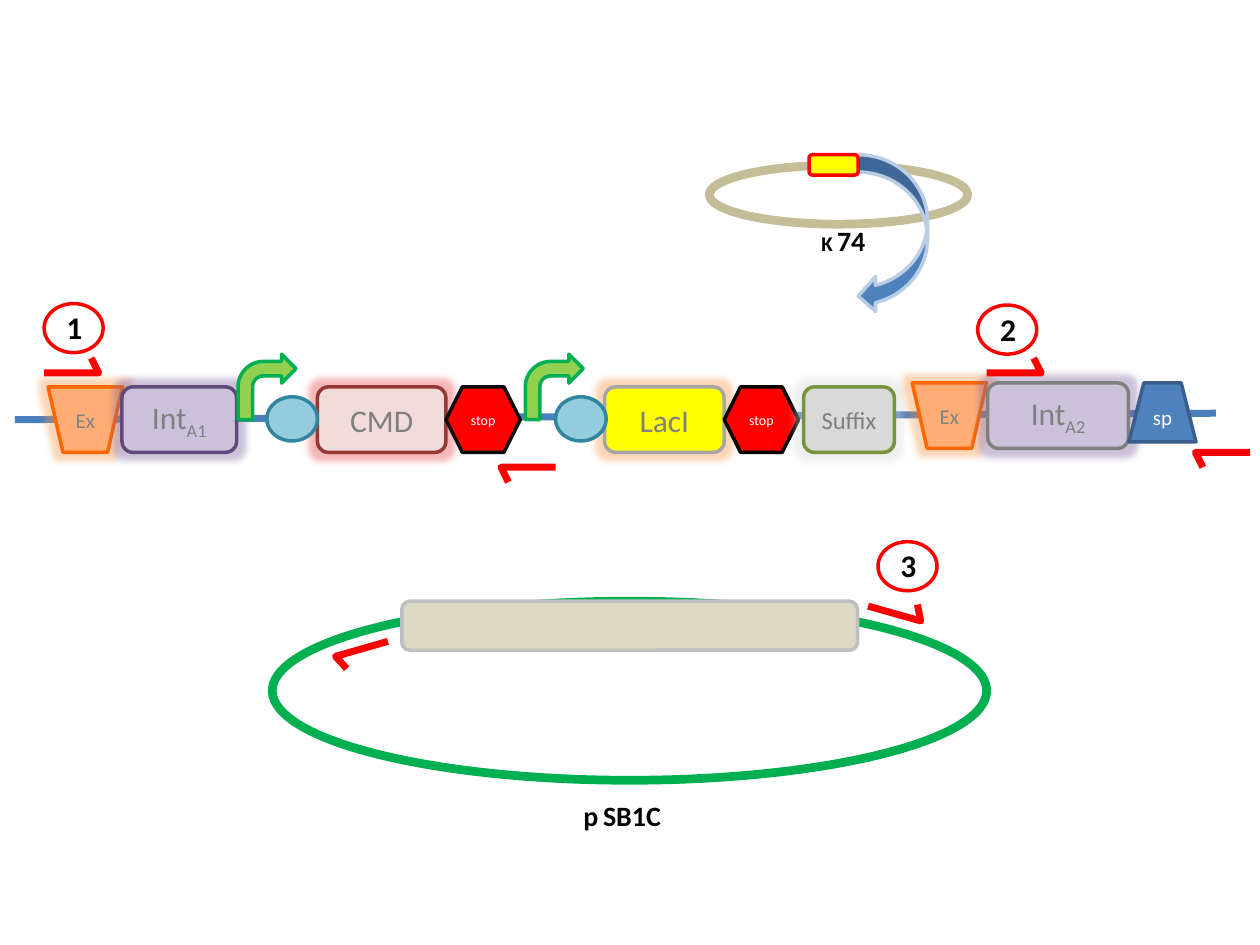
"""Build a slide of a gene construct with its primers and two plasmids."""
from math import cos, radians, sin

from lxml.etree import SubElement
from pptx import Presentation
from pptx.dml.color import RGBColor
from pptx.enum.shapes import MSO_CONNECTOR, MSO_SHAPE as Kind
from pptx.enum.text import MSO_ANCHOR as Anchor, PP_ALIGN as Align
from pptx.oxml.ns import qn
from pptx.util import Cm, Pt

COLOURS = {
    "blue": "4F81BD", "navy": "3A5F8C", "backbone": "4B7EBC", "ice": "B9CDE5",
    "peach": "FFAD75", "orange": "FF6600", "amber": "F79646",
    "lilac": "CCC1DA", "plum": "604A7B", "violet": "8064A2",
    "lime": "92D050", "green": "00B050", "olive": "77933C",
    "rose": "F2DCDB", "maroon": "953735", "red": "FF0000", "coral": "E84A4A",
    "sky": "93CDDD", "teal": "31859C", "yellow": "FFFF00",
    "sand": "DDD9C3", "tan": "C4BD97",
    "silver": "BFBFBF", "mist": "D9D9D9", "ash": "A6A6A6", "grey": "808080",
    "ink": "0D0D0D", "black": "000000", "white": "FFFFFF",
}
EX, INT, STOP = [("Ex", 12)], "Int", [("stop", 8)]
LEFT_TOP, RIGHT_TOP, PROMOTER_TOP, RBS_TOP = 7.8, 7.72, 7.14, 8
PART_H = 1.32
WIDE = 1.5

# kind, box, fill, line, label, label colour, glow
GENES = [
    (Kind.FLOWCHART_MANUAL_OPERATION, (0.97, LEFT_TOP, WIDE, PART_H),
     "peach", "orange", EX, "grey", "amber"),
    (Kind.ROUNDED_RECTANGLE, (2.46, LEFT_TOP, 2.31, PART_H),
     "lilac", "plum", [(INT, 18), ("A1", 18, -25)], "grey", "violet"),
    (Kind.BENT_ARROW, (4.8, PROMOTER_TOP, 1.17, PART_H), "lime", "green"),
    (Kind.ROUNDED_RECTANGLE, (6.4, LEFT_TOP, 2.59, PART_H),
     "rose", "maroon", [("CMD", 18)], "grey", "coral"),
    (Kind.HEXAGON, (8.99, LEFT_TOP, WIDE, PART_H), "red", "ink", STOP, "white"),
    (Kind.OVAL, (5.38, RBS_TOP, 1.02, 0.89), "sky", "teal"),
    (Kind.BENT_ARROW, (10.59, PROMOTER_TOP, 1.17, PART_H), "lime", "green"),
    (Kind.ROUNDED_RECTANGLE, (12.19, LEFT_TOP, 2.41, PART_H),
     "yellow", "ash", [("LacI", 18)], "grey", "amber"),
    (Kind.OVAL, (11.2, RBS_TOP, 1.02, 0.89), "sky", "teal"),
    (Kind.HEXAGON, (14.6, LEFT_TOP, WIDE, PART_H), "red", "black", STOP, "white"),
    (Kind.ROUNDED_RECTANGLE, (16.2, LEFT_TOP, 1.83, PART_H),
     "mist", "olive", [("Suffix", 14)], "grey", "mist"),
    (Kind.FLOWCHART_MANUAL_OPERATION, (18.39, RIGHT_TOP, WIDE, PART_H),
     "peach", "orange", EX, "grey", "amber"),
    (Kind.ROUNDED_RECTANGLE, (19.91, RIGHT_TOP, 2.84, PART_H),
     "lilac", "grey", [(INT, 18), ("A2", 18, -25)], "grey", "violet"),
    (Kind.TRAPEZOID, (22.76, RIGHT_TOP, 1.35, 1.19),
     "blue", "navy", [("sp", 12)], "white"),
]
# kind, box, fill, line, line points
PLASMIDS = [
    (Kind.OVAL, (5.49, 12.12, 14.4, 3.61), None, "green", 5),
    (Kind.ROUNDED_RECTANGLE, (8.1, 12.12, 9.19, 0.99), "sand", "silver", 2),
    (Kind.OVAL, (14.3, 3.33, 5.21, 1.19), None, "tan", 5),
    (Kind.CURVED_LEFT_ARROW, (17.3, 3.12, 1.4, 3.2), "blue", "ice", 2),
    (Kind.ROUNDED_RECTANGLE, (16.31, 3.12, 0.99, 0.41), "yellow", "red", 2),
]
PLASMID_NAMES = [
    ((11.51, 15.98, 2.21, 0.94), [("p", 16), (" ", 12), ("SB1C", 16)]),
    ((16.31, 4.39, 1.6, 0.94), [("K", 12), (" ", 10.5), ("74", 16)]),
]
# tail x, tail y, angle
PRIMERS = [(0.89, 7.52, 0), (19.89, 7.52, 0), (11.2, 9.42, 180),
           (25.2, 9.12, 180), (7.82, 12.93, 164), (17.5, 12.22, 15.7)]
PRIMER_OUTLINE = [(0, 0), (1.1, 0), (0.95, -0.3)]
STEPS = [("1", 0.89, 6.12), ("2", 19.71, 6.15), ("3", 17.7, 10.92)]
GENE_FRAME = {"word_wrap": False, "vertical_anchor": Anchor.MIDDLE,
              "margin_left": 0, "margin_right": 0,
              "margin_top": 0, "margin_bottom": 0}
NAME_FRAME = {"word_wrap": True, "vertical_anchor": Anchor.TOP}


def rgb(colour):
    return RGBColor.from_string(COLOURS[colour])


def outline(shape, fill, line, points):
    shape.shadow.inherit = False
    if fill:
        shape.fill.solid()
        shape.fill.fore_color.rgb = rgb(fill)
    else:
        shape.fill.background()
    shape.line.color.rgb = rgb(line)
    shape.line.width = Pt(points)


def write(frame, pieces, colour, frame_format, align, bold=False):
    for key, value in frame_format.items():
        setattr(frame, key, value)
    paragraph = frame.paragraphs[0]
    paragraph.alignment = align
    for text, size, *baseline in pieces:
        run = paragraph.add_run()
        run.text = text
        run.font.color.rgb = rgb(colour)
        for key, value in {"name": "Calibri", "size": Pt(size), "bold": bold}.items():
            setattr(run.font, key, value)
        if baseline:
            run._r.get_or_add_rPr().set("baseline", str(baseline[0] * 1000))


def add_glow(shape, colour):
    effects = shape._element.spPr.find(qn("a:effectLst"))
    glow = SubElement(effects, qn("a:glow"), rad=str(Cm(0.28)))
    tint = SubElement(glow, qn("a:srgbClr"), val=COLOURS[colour])
    SubElement(tint, qn("a:alpha"), val="40000")


def add_part(shapes, kind, box, fill, line, points=2):
    part = shapes.add_shape(kind, *map(Cm, box))
    outline(part, fill, line, points)
    return part


def add_gene(shapes, kind, box, fill, line, label=(), ink="grey", glow=None):
    gene = add_part(shapes, kind, box, fill, line)
    if label:
        write(gene.text_frame, label, ink, GENE_FRAME, Align.CENTER)
    if glow:
        add_glow(gene, glow)


def add_name(shapes, box, pieces):
    name = shapes.add_textbox(*map(Cm, box))
    write(name.text_frame, pieces, "black", NAME_FRAME, Align.LEFT, bold=True)


def add_primer(shapes, x, y, angle):
    c, s = cos(radians(angle)), sin(radians(angle))
    tail, *rest = [(Cm(x + u * c - v * s), Cm(y + u * s + v * c))
                   for u, v in PRIMER_OUTLINE]
    builder = shapes.build_freeform(*tail)
    builder.add_line_segments(rest, close=False)
    outline(builder.convert_to_shape(), None, "red", 4)


def main():
    deck = Presentation()
    deck.slide_width, deck.slide_height = Cm(25.4), Cm(19.05)
    shapes = deck.slides.add_slide(deck.slide_layouts[6]).shapes

    backbone = shapes.add_connector(
        MSO_CONNECTOR.STRAIGHT, *map(Cm, (0.3, 8.46, 24.51, 8.33)))
    backbone.line.color.rgb = rgb("backbone")
    backbone.line.width = Pt(4)
    SubElement(backbone._element.spPr, qn("a:effectLst"))

    for gene in GENES:
        add_gene(shapes, *gene)
    for primer in PRIMERS:
        add_primer(shapes, *primer)
    for number, x, y in STEPS:
        add_name(shapes, (x + 0.2, y - 0.03, 1.6, 1.02), [(number, 18)])
        add_part(shapes, Kind.OVAL, (x, y, 1.19, 0.99), None, "red")
    for plasmid in PLASMIDS:
        add_part(shapes, *plasmid)
    for name in PLASMID_NAMES:
        add_name(shapes, *name)
    deck.save("out.pptx")


if __name__ == "__main__":
    main()
